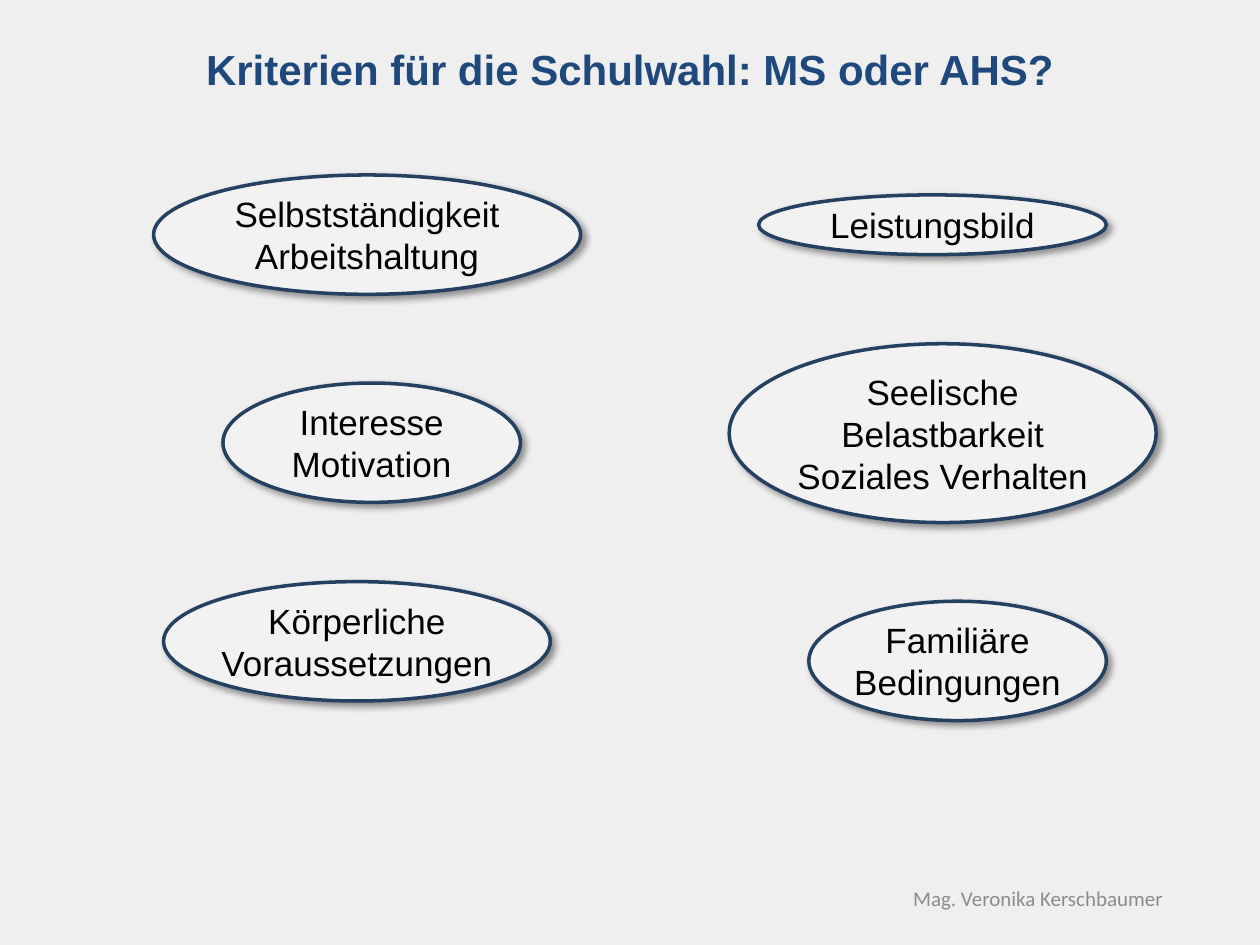
from pptx import Presentation
from pptx.dml.color import RGBColor
from pptx.enum.shapes import MSO_SHAPE
from pptx.enum.text import MSO_ANCHOR, MSO_AUTO_SIZE, PP_ALIGN
from pptx.oxml import parse_xml
from pptx.oxml.ns import nsdecls
from pptx.util import Pt

OVAL = MSO_SHAPE.OVAL
MIDDLE = MSO_ANCHOR.MIDDLE
GROW = MSO_AUTO_SIZE.SHAPE_TO_FIT_TEXT
NO_FIT = MSO_AUTO_SIZE.NONE
CENTER, RIGHT = PP_ALIGN.CENTER, PP_ALIGN.RIGHT

SHADOW = (
    f'<a:effectLst {nsdecls("a")}>'
    '<a:outerShdw blurRad="50800" dist="38100" dir="2700000" algn="tl" rotWithShape="0">'
    '<a:srgbClr val="000000"><a:alpha val="40000"/></a:srgbClr>'
    '</a:outerShdw></a:effectLst>'
)


def color(value):
    return RGBColor.from_string(value)


def write_text(shape, text, size=20, font="Arial", text_color="000000", bold=False,
               align=CENTER, line_spacing=None, anchor=MIDDLE, fit=GROW, margin=0):
    frame = shape.text_frame
    frame.text = text
    frame.word_wrap = True
    frame.auto_size = fit
    frame.vertical_anchor = anchor
    frame.margin_left = frame.margin_right = Pt(2 * margin)
    frame.margin_top = frame.margin_bottom = Pt(margin)
    for paragraph in frame.paragraphs:
        paragraph.alignment = align
        paragraph.line_spacing = line_spacing
        paragraph.font.size = Pt(size)
        for run in paragraph.runs:
            run.font.size = Pt(size)
            run.font.name = font
            run.font.bold = bold
            run.font.color.rgb = color(text_color)


presentation = Presentation()
presentation.slide_width, presentation.slide_height = Pt(720), Pt(540)
slide = presentation.slides.add_slide(presentation.slide_layouts[5])

# Background
slide.background.fill.solid()
slide.background.fill.fore_color.rgb = color("EFEFEF")

# Title
title = slide.shapes.title
title.left, title.top, title.width, title.height = Pt(0), Pt(0), Pt(720), Pt(82.8)
write_text(title, "Kriterien für die Schulwahl: MS oder AHS?", size=24, bold=True,
           text_color="1F497D", line_spacing=Pt(24), fit=NO_FIT, margin=3.6)

# Criteria: text, left, top, width, height
criteria = [
    ("Selbstständigkeit Arbeitshaltung", 87.8, 100, 244, 68.2),
    ("Leistungsbild", 433.5, 111.4, 198.7, 34.1),
    ("Interesse Motivation", 127.4, 218.9, 170, 68.2),
    ("Körperliche Voraussetzungen", 93.5, 332.4, 221, 68.2),
    ("Seelische Belastbarkeit\nSoziales Verhalten", 416.7, 196.4, 244, 102.2),
    ("Familiäre Bedingungen", 462.2, 343.6, 170, 68.2),
]
for text, left, top, width, height in criteria:
    ellipse = slide.shapes.add_shape(OVAL, Pt(left), Pt(top), Pt(width), Pt(height))
    ellipse.fill.solid()
    ellipse.fill.fore_color.rgb = color("F2F2F2")
    ellipse.line.color.rgb = color("254061")
    ellipse.line.width = Pt(2)
    ellipse._element.spPr.append(parse_xml(SHADOW))
    write_text(ellipse, text)

# Author line
author = slide.shapes.add_textbox(Pt(48.2), Pt(502.6), Pt(623.5), Pt(21.8))
write_text(author, "Mag. Veronika Kerschbaumer", size=12, font="Calibri",
           text_color="8C8C8C", align=RIGHT, anchor=MSO_ANCHOR.TOP, margin=3.6)

presentation.save("out.pptx")
